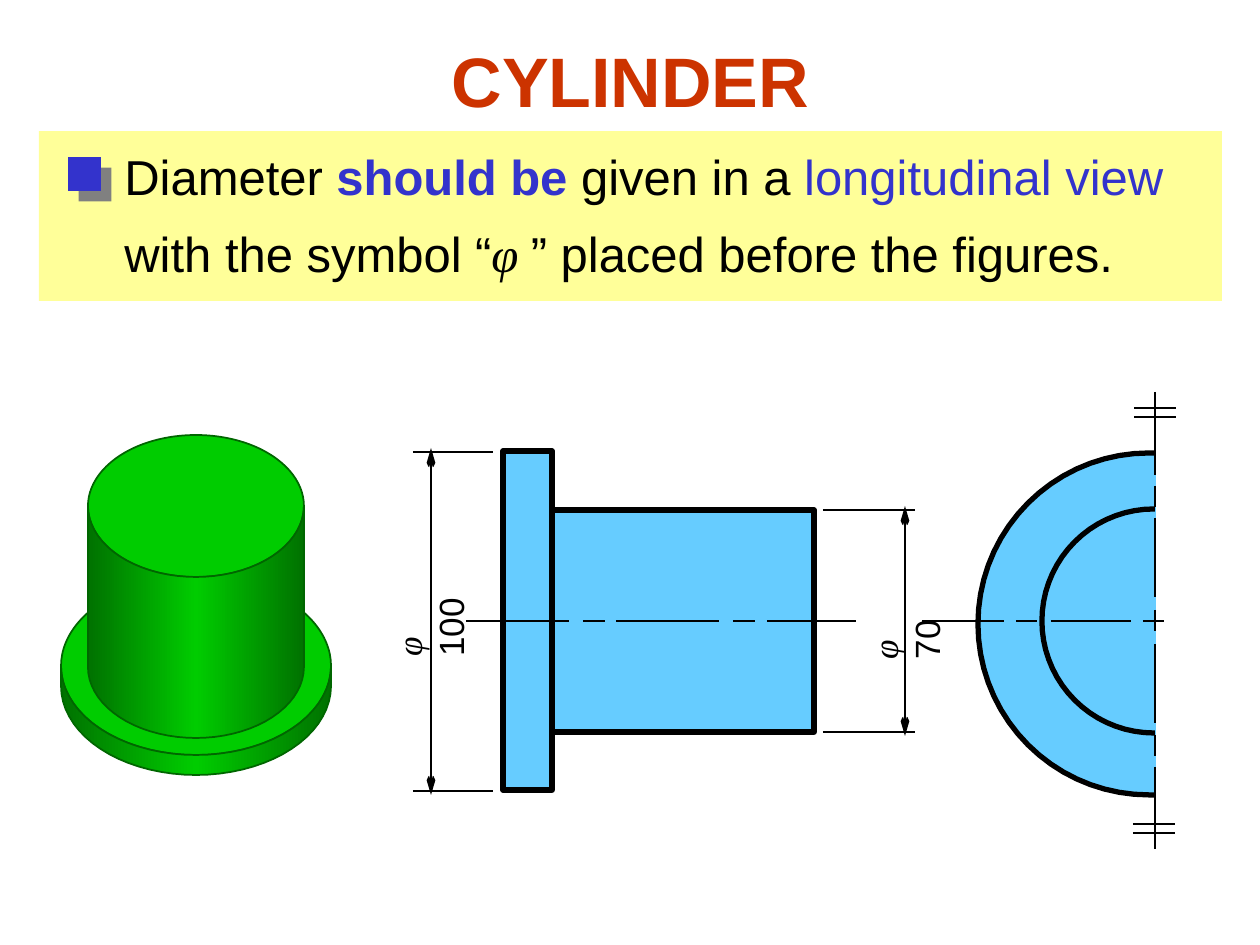
from copy import deepcopy
from dataclasses import dataclass
from math import cos, radians, sin
from typing import NamedTuple

from lxml.etree import SubElement
from pptx import Presentation
from pptx.dml.color import RGBColor
from pptx.enum.shapes import MSO_CONNECTOR, MSO_SHAPE
from pptx.enum.text import MSO_ANCHOR as Anchor, PP_ALIGN as Align
from pptx.oxml.ns import qn
from pptx.util import Pt

PX_EMU = 914400 / 126


@dataclass(frozen=True)
class Theme:
    title: str = "CC3300"
    ink: str = "000000"
    accent: str = "3333CC"
    band: str = "FFFF99"
    shade: str = "808080"
    green: str = "00CC00"
    dark_green: str = "007200"
    green_edge: str = "006600"
    section: str = "66CCFF"
    sans: str = "Arial"
    serif: str = "Times New Roman"
    title_size: int = 40
    body_size: int = 28
    label_size: int = 20
    thin: float = 1
    fine: float = 1.5
    bold: float = 3


class Box(NamedTuple):
    x: int
    y: int
    w: int
    h: int


class Run(NamedTuple):
    text: str
    color: str = "000000"
    bold: bool = False
    symbol: bool = False


class Cylinder(NamedTuple):
    rx: int
    ry: int
    top: int
    bottom: int


class Dimension(NamedTuple):
    value: str
    x: int
    top: int
    bottom: int
    ext_from: int
    ext_to: int
    label: Box


class HalfDisc(NamedTuple):
    cx: int
    cy: int
    r: int
    edge: int


THEME = Theme()
SOLID_CX = 196
CYLINDERS = [Cylinder(108, 71, 506, 667), Cylinder(135, 89, 666, 686)]
SECTIONS = [Box(503, 451, 49, 339), Box(552, 510, 262, 222)]
HALF_DISCS = [HalfDisc(1149, 624, 171, 1156), HalfDisc(1154, 621, 112, 1155)]
DIMENSIONS = [
    Dimension("100", 431, 452, 791, 413, 493, Box(387, 587, 80, 70)),
    Dimension("70", 905, 510, 732, 823, 915, Box(863, 609, 80, 50)),
]
AXIS_Y, AXIS_X = 621, 1155
AXIS_DASHES = [(466, 569), (583, 605), (616, 719), (733, 755), (767, 856),
               (922, 1004), (1016, 1037), (1051, 1131), (1143, 1164)]
SYMMETRY_DASHES = [(392, 475), (486, 507), (518, 597), (610, 631),
                   (644, 723), (735, 756), (767, 849)]
SYMMETRY_MARKS = [(1134, 408), (1134, 417), (1133, 824), (1133, 833)]
MARK_WIDTH = 42
ARROW_OVERRUN = 4


def emu(px: float) -> int:
    return round(px * PX_EMU)


def rgb(color: str) -> RGBColor:
    return RGBColor.from_string(color)


def style(shape, fill: str, edge: str = "", width: float = 0):
    shape.shadow.inherit = False
    shape.fill.solid()
    shape.fill.fore_color.rgb = rgb(fill)
    if edge:
        shape.line.color.rgb = rgb(edge)
        shape.line.width = Pt(width)
    else:
        shape.line.fill.background()
    return shape


def add_preset(slide, kind, box: Box, fill: str, edge: str = "", width: float = 0):
    return style(slide.shapes.add_shape(kind, *map(emu, box)), fill, edge, width)


def add_outline(slide, points: list, close: bool):
    start, *rest = [(emu(x), emu(y)) for x, y in points]
    builder = slide.shapes.build_freeform(*start, scale=1.0)
    builder.add_line_segments(rest, close=close)
    return builder.convert_to_shape()


def add_line(slide, x1: int, y1: int, x2: int, y2: int, arrows: bool = False) -> None:
    line = slide.shapes.add_connector(MSO_CONNECTOR.STRAIGHT, *map(emu, (x1, y1, x2, y2)))
    line.line.color.rgb = rgb(THEME.ink)
    line.line.width = Pt(THEME.fine)
    if arrows:
        for end in ("a:headEnd", "a:tailEnd"):
            SubElement(line.line._get_or_add_ln(), qn(end), type="arrow", w="sm", len="lg")
    SubElement(line._element.spPr, qn("a:effectLst"))


def add_text(slide, box: Box, runs: list[Run], *, size: int, align=Align.LEFT,
             anchor=Anchor.TOP, spacing: float = 1.0, rotation: int = 0,
             inset: bool = True) -> None:
    text = slide.shapes.add_textbox(*map(emu, box))
    text.rotation = rotation
    frame = text.text_frame
    frame.word_wrap = True
    frame.vertical_anchor = anchor
    if not inset:
        frame.margin_left = frame.margin_right = frame.margin_top = frame.margin_bottom = 0
    paragraph = frame.paragraphs[0]
    paragraph.alignment = align
    paragraph.line_spacing = spacing
    for item in runs:
        run = paragraph.add_run()
        run.text = item.text
        run.font.size = Pt(size)
        run.font.name = THEME.serif if item.symbol else THEME.sans
        run.font.italic = item.symbol
        run.font.bold = item.bold
        run.font.color.rgb = rgb(item.color)


def arc(cx: int, cy: int, rx: int, ry: int, start: int, end: int) -> list:
    step = 5 if end > start else -5
    return [(cx + rx * cos(radians(a)), cy + ry * sin(radians(a)))
            for a in range(start, end + step, step)]


def add_cylinder(slide, part: Cylinder) -> None:
    top = Box(SOLID_CX - part.rx, part.top - part.ry, 2 * part.rx, 2 * part.ry)
    add_preset(slide, MSO_SHAPE.OVAL, top, THEME.green, THEME.green_edge, THEME.thin)


def add_wall(slide, part: Cylinder) -> None:
    outline = (arc(SOLID_CX, part.bottom, part.rx, part.ry, 180, 0)
               + arc(SOLID_CX, part.top, part.rx, part.ry, 0, 180))
    wall = style(add_outline(slide, outline, True), THEME.green, THEME.green_edge, THEME.thin)
    wall.fill.gradient()
    wall.fill.gradient_angle = 0
    for stop in wall.fill.gradient_stops:
        stop.color.rgb = rgb(THEME.dark_green)
    first = next(wall._element.iter(qn("a:gs")))
    first.addnext(deepcopy(first))
    for stop, position in zip(wall.fill.gradient_stops, (0, 0.5, 1)):
        stop.position = position
    wall.fill.gradient_stops[1].color.rgb = rgb(THEME.green)


def add_half_disc(slide, disc: HalfDisc) -> None:
    points = [(disc.edge, disc.cy + disc.r),
              *arc(disc.cx, disc.cy, disc.r, disc.r, 90, 270),
              (disc.edge, disc.cy - disc.r)]
    half = style(add_outline(slide, points, False), THEME.section, THEME.ink, THEME.bold)
    # The curve is stroked open; the closed area is filled without a line
    curve = next(half._element.iter(qn("a:path")))
    area = deepcopy(curve)
    curve.set("fill", "none")
    area.set("stroke", "0")
    SubElement(area, qn("a:close"))
    curve.addprevious(area)


def add_dimension(slide, dim: Dimension) -> None:
    for y in (dim.top, dim.bottom):
        add_line(slide, dim.ext_from, y, dim.ext_to, y)
    add_line(slide, dim.x, dim.top - ARROW_OVERRUN, dim.x, dim.bottom + ARROW_OVERRUN, True)
    x, y, w, h = dim.label
    unturned = Box(x + (w - h) // 2, y + (h - w) // 2, h, w)
    add_text(slide, unturned, [Run("φ ", symbol=True), Run(dim.value)],
             size=THEME.label_size, rotation=270, inset=False)


def main() -> None:
    deck = Presentation()
    deck.slide_width, deck.slide_height = emu(1260), emu(945)
    slide = deck.slides.add_slide(deck.slide_layouts[6])

    # Title and rule
    add_preset(slide, MSO_SHAPE.RECTANGLE, Box(39, 131, 1183, 170), THEME.band)
    add_text(slide, Box(95, 0, 1071, 158), [Run("CYLINDER", THEME.title, True)],
             size=THEME.title_size, align=Align.CENTER, anchor=Anchor.MIDDLE)
    add_text(slide, Box(112, 123, 1105, 159), [
        Run("Diameter "), Run("should be", THEME.accent, True), Run(" given in a "),
        Run("longitudinal view", THEME.accent), Run(" with the symbol “"),
        Run("φ ", symbol=True), Run("” placed before the figures."),
    ], size=THEME.body_size, spacing=1.3)
    bullet = add_preset(slide, MSO_SHAPE.RECTANGLE, Box(68, 157, 33, 34), THEME.accent)
    shadow = SubElement(bullet._element.spPr.find(qn("a:effectLst")), qn("a:outerShdw"),
                        dist=str(Pt(8.5)), dir="2700000", algn="ctr", rotWithShape="0")
    SubElement(shadow, qn("a:srgbClr"), val=THEME.shade)

    # Solid view
    for draw in (add_cylinder, add_wall):
        for part in reversed(CYLINDERS):
            draw(slide, part)

    # Longitudinal view and half end view
    for section in SECTIONS:
        add_preset(slide, MSO_SHAPE.RECTANGLE, section, THEME.section, THEME.ink, THEME.bold)
    for disc in HALF_DISCS:
        add_half_disc(slide, disc)

    # Centre lines and symmetry marks
    for start, end in AXIS_DASHES:
        add_line(slide, start, AXIS_Y, end, AXIS_Y)
    for start, end in SYMMETRY_DASHES:
        add_line(slide, AXIS_X, start, AXIS_X, end)
    for x, y in SYMMETRY_MARKS:
        add_line(slide, x, y, x + MARK_WIDTH, y)

    # Diameters
    for dim in DIMENSIONS:
        add_dimension(slide, dim)

    deck.save("out.pptx")


if __name__ == "__main__":
    main()
